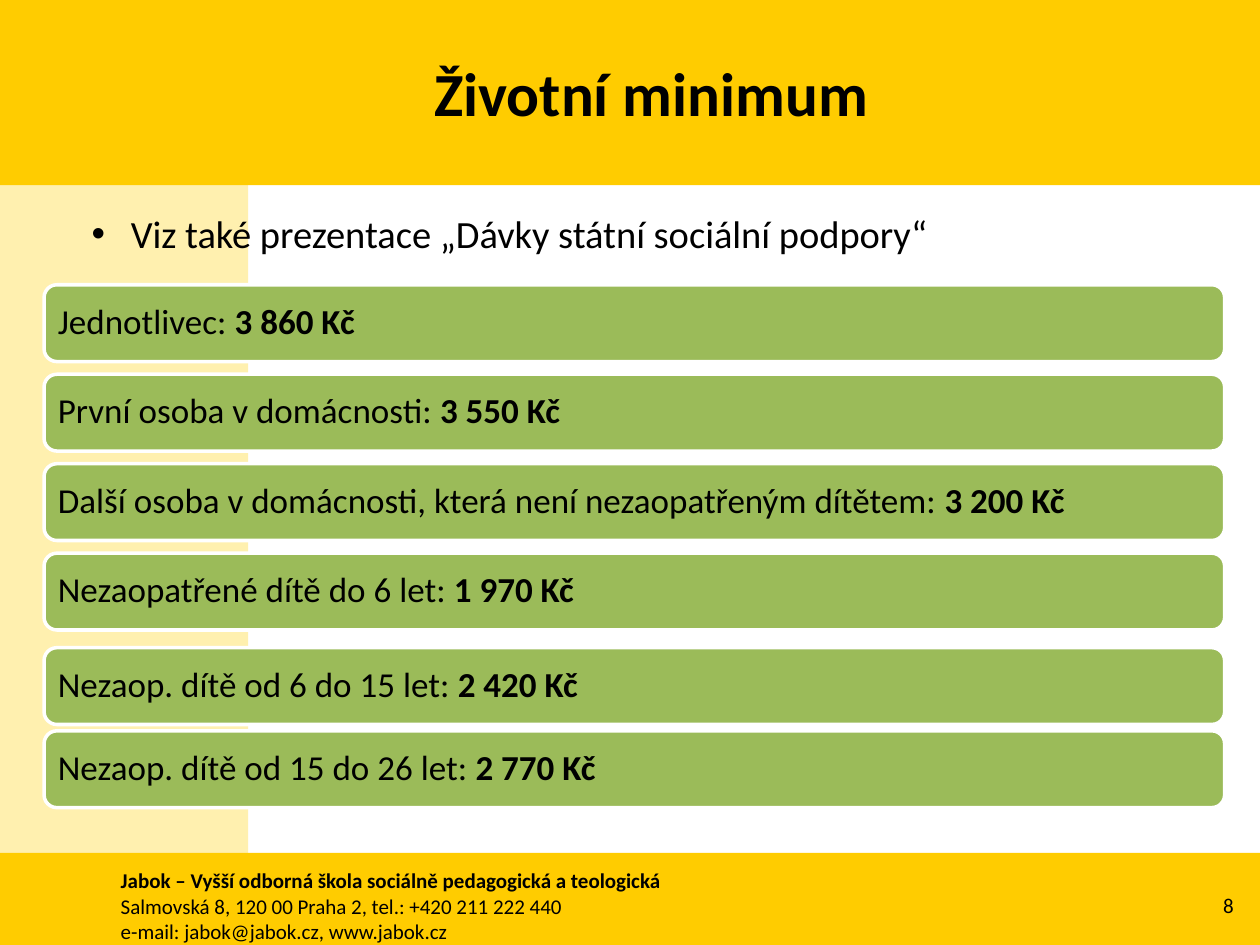
from lxml import etree
from pptx import Presentation
from pptx.dml.color import RGBColor
from pptx.enum.shapes import MSO_SHAPE as Shape
from pptx.enum.text import MSO_ANCHOR as Anchor, PP_ALIGN as Align
from pptx.oxml.ns import qn
from pptx.util import Inches, Pt

COLORS = {"gold": "FFCC00", "cream": "FFF0AF", "green": "9BBB59",
          "white": "FFFFFF", "black": "000000"}
FONT = "Calibri"
RATES = [
    (2.26, "Jednotlivec: ", "3 860 Kč"),
    (2.97, "První osoba v domácnosti: ", "3 550 Kč"),
    (3.68, "Další osoba v domácnosti, která není nezaopatřeným dítětem: ", "3 200 Kč"),
    (4.39, "Nezaopatřené dítě do 6 let: ", "1 970 Kč"),
    (5.14, "Nezaop. dítě od 6 do 15 let: ", "2 420 Kč"),
    (5.8, "Nezaop. dítě od 15 do 26 let: ", "2 770 Kč"),
]
SCHOOL = [
    "Jabok – Vyšší odborná škola sociálně pedagogická a teologická",
    "Salmovská 8, 120 00 Praha 2, tel.: +420 211 222 440",
    "e-mail: jabok@jabok.cz, www.jabok.cz",
]


def color(name):
    """Return the named colour."""
    return RGBColor.from_string(COLORS[name])


def style(font, size, bold=False):
    """Set the face, size, weight and colour of a font."""
    font.name, font.size, font.bold = FONT, Pt(size), bold
    font.color.rgb = color("black")


def add_block(slide, box, fill, kind=Shape.RECTANGLE):
    """Add a filled shape without line or shadow."""
    block = slide.shapes.add_shape(kind, *map(Inches, box))
    block.shadow.inherit = False
    block.fill.solid()
    block.fill.fore_color.rgb = color(fill)
    block.line.fill.background()
    return block


def add_text(slide, box, lines, size, bold=False, align=Align.LEFT, anchor=Anchor.TOP):
    """Add a wrapped text box with one paragraph for each line."""
    frame = slide.shapes.add_textbox(*map(Inches, box)).text_frame
    frame.word_wrap = True
    frame.vertical_anchor = anchor
    frame.text = "\n".join(lines)
    for para in frame.paragraphs:
        para.alignment = align
        style(para.runs[0].font, size, bold)
    return frame


def add_header(slide, left, top, width, height):
    """Draw the top band with the title."""
    add_block(slide, (left, top, width, height), "gold")
    add_text(slide, (left + 0.51, top + 0.36, width - 0.68, 0.74), ["Životní minimum"],
             35, True, Align.CENTER, Anchor.MIDDLE)


def add_footer(slide, left, top, width, height):
    """Draw the bottom band with the school address and page number."""
    add_block(slide, (left, top, width, height), "gold")
    frame = add_text(slide, (left + 0.86, top + 0.07, 8.19, 0.66), SCHOOL, 12)
    frame.paragraphs[0].runs[0].font.bold = True
    add_text(slide, (left + width - 0.74, top + 0.21, 0.63, 0.4), ["8"],
             12, align=Align.RIGHT, anchor=Anchor.MIDDLE)


def add_note(slide, left, top, width, height):
    """Write the bulleted reference line."""
    frame = add_text(slide, (left, top, width, height),
                     ["Viz také prezentace „Dávky státní sociální podpory“"], 22)
    props = frame.paragraphs[0]._p.get_or_add_pPr()
    props.set("marL", str(Inches(0.31)))
    props.set("indent", str(-Inches(0.31)))
    etree.SubElement(props, qn("a:buFont")).set("typeface", "Arial")
    etree.SubElement(props, qn("a:buChar")).set("char", "•")


def add_rate(slide, left, top, width, height, label, amount):
    """Draw one rounded bar with a label and a bold amount."""
    bar = add_block(slide, (left, top, width, height), "green", Shape.ROUNDED_RECTANGLE)
    bar.line.color.rgb = color("white")
    bar.line.width = Pt(2)
    frame = bar.text_frame
    frame.word_wrap = True
    frame.vertical_anchor = Anchor.MIDDLE
    frame.margin_left = frame.margin_right = Inches(0.08)
    frame.margin_top = frame.margin_bottom = Inches(0.08)
    para = frame.paragraphs[0]
    para.alignment = Align.LEFT
    para.line_spacing = 0.9
    for words, bold in ((label, False), (amount, True)):
        run = para.add_run()
        run.text = words
        style(run.font, 20, bold)


def main():
    """Build and save the slide."""
    deck = Presentation()
    deck.slide_width, deck.slide_height = Inches(10), Inches(7.5)
    slide = deck.slides.add_slide(deck.slide_layouts[6])
    add_block(slide, (0, 1.47, 1.97, 5.3), "cream")
    add_header(slide, 0, 0, 10, 1.47)
    add_footer(slide, 0, 6.77, 10, 0.73)
    for top, label, amount in RATES:
        add_rate(slide, 0.35, top, 9.37, 0.61, label, amount)
    add_note(slide, 0.63, 1.62, 8.66, 0.47)
    deck.save("out.pptx")


if __name__ == "__main__":
    main()
